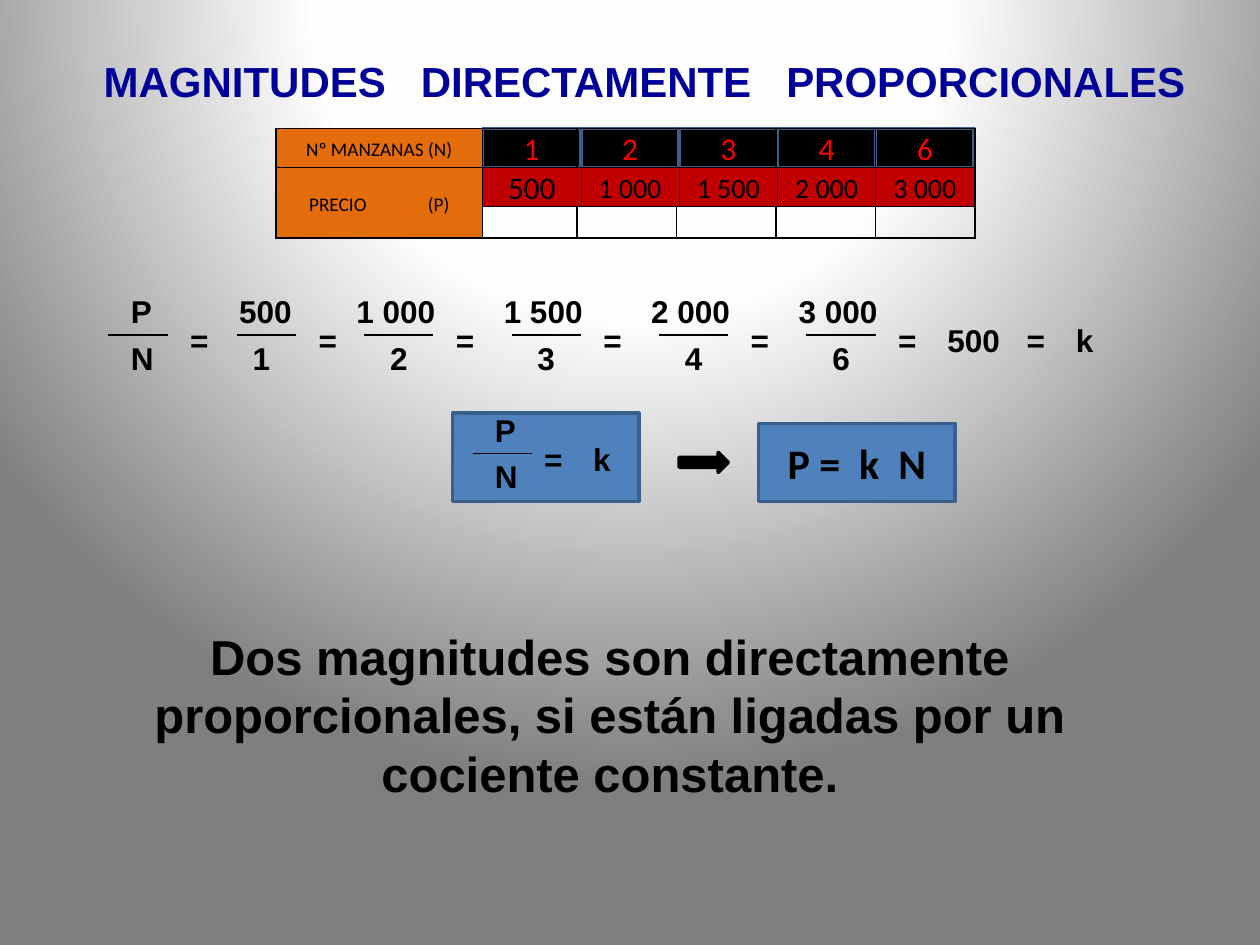
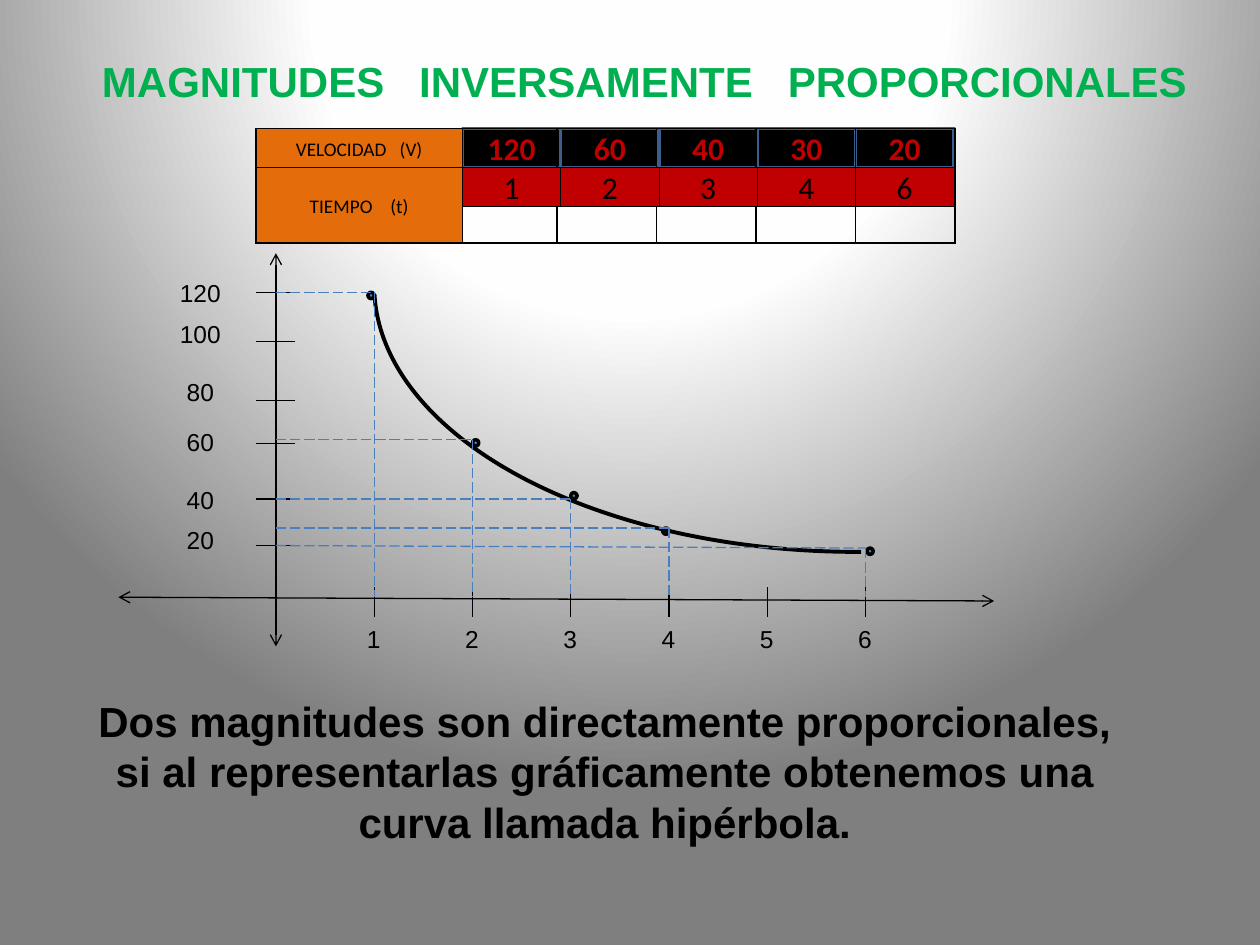
from lxml import etree
from pptx import Presentation
from pptx import util as u
from pptx.dml.color import RGBColor
from pptx.enum import dml, shapes, text
from pptx.oxml import ns

BLACK, RED, ORANGE = "000000", "C00000", "E46C0A"
BLUE, EDGE, DASH = "4F81BD", "3A5F8C", "4B7EBC"
BODY = {"size": 18, "name": "Arial", "bold": True, "color": BLACK}
AXIS = {**BODY, "size": 14, "bold": False}
LABEL = {"size": 11, "name": "Calibri", "bold": False, "color": BLACK}
VALUE = {**LABEL, "size": 18}
KINDS = shapes.MSO_SHAPE
CENTER = text.PP_ALIGN.CENTER
color = RGBColor.from_string


def write(frame, words, style, align=CENTER, gap=0):
    """Write one paragraph; each "|" becomes a space widened by gap points."""
    para = frame.paragraphs[0]
    para.alignment = align
    for index, part in enumerate(words.split("|")):
        for content, extra in ((" ", gap), (part, 0)):
            if extra == 0 and content == " " or index == 0 and content == " ":
                continue
            span = para.add_run()
            span.text = content
            for key, value in style.items():
                if key == "color":
                    span.font.color.rgb = color(value)
                else:
                    setattr(span.font, key, u.Pt(value) if key == "size" else value)
            if extra:
                span.font._element.set("spc", str(round(extra * 100)))
    return para


def box(page, area, words="", style=BODY, kind=None, fill=BLUE, edge=EDGE,
        weight=2, align=CENTER, gap=0):
    """Add a preset shape, or a plain text box when kind is None."""
    area = [u.Inches(length) for length in area]
    if kind is None:
        shape = page.shapes.add_textbox(*area)
    else:
        shape = page.shapes.add_shape(kind, *area)
        shape.shadow.inherit = False
        shape.line.color.rgb = color(edge)
        shape.line.width = u.Pt(weight)
        if fill:
            shape.fill.solid()
            shape.fill.fore_color.rgb = color(fill)
        else:
            shape.fill.background()
        shape.text_frame.vertical_anchor = text.MSO_ANCHOR.MIDDLE
    shape.text_frame.word_wrap = True
    if words:
        write(shape.text_frame, words, style, align, gap)
    return shape


deck = Presentation()
deck.slide_width, deck.slide_height = u.Inches(10), u.Inches(7.5)

# Shared radial background
backdrop = deck.slide_master.background.fill
backdrop.gradient()
gradient = deck.slide_master._element.find(".//" + ns.qn("p:bgPr") + "/" + ns.qn("a:gradFill"))
for child in list(gradient):
    gradient.remove(child)
stops = etree.SubElement(gradient, ns.qn("a:gsLst"))
for position, shade in ((0, "FFFFFF"), (40, "FEFEFE"), (100, "7F7F7F")):
    stop = etree.SubElement(stops, ns.qn("a:gs"), pos=str(position * 1000))
    etree.SubElement(stop, ns.qn("a:srgbClr"), val=shade)
circle = etree.SubElement(gradient, ns.qn("a:path"))
circle.set("path", "circle")
etree.SubElement(circle, ns.qn("a:fillToRect"), l="50000", t="-80000", r="50000", b="180000")

# Title, table and statement of each slide
topics = [
    {"title": "MAGNITUDES|DIRECTAMENTE|PROPORCIONALES", "color": "000099",
     "left": 2.19, "strip": 3.83, "height": 0.56,
     "labels": [("Nº MANZANAS (N)", 0), ("PRECIO|(P)", 32.4)],
     "top": ["1", "2", "3", "4", "6"], "top_style": {**VALUE, "color": "FF0000"},
     "bottom": ["500", "1 000", "1 500", "2 000", "3 000"],
     "statement": "Dos magnitudes son directamente proporcionales, si están "
                  "ligadas por un cociente constante.",
     "area": (0.62, 4.92, 8.44, 1.51), "size": 28},
    {"title": "MAGNITUDES|INVERSAMENTE|PROPORCIONALES", "color": "00B050",
     "left": 2.03, "strip": 3.67, "height": 0.6,
     "labels": [("VELOCIDAD|(V)", 5), ("TIEMPO|(t)", 7.5)],
     "top": ["120", "60", "40", "30", "20"],
     "top_style": {**VALUE, "color": RED, "bold": True},
     "bottom": ["1", "2", "3", "4", "6"],
     "statement": "Dos magnitudes son directamente proporcionales, si al "
                  "representarlas gráficamente obtenemos una curva llamada hipérbola.",
     "area": (0.62, 5.47, 8.36, 1.31), "size": 24},
]
pages = []
for topic in topics:
    page = deck.slides.add_slide(deck.slide_layouts[6])
    pages.append(page)
    title = box(page, (0.7, 0.39, 8.83, 0.5), topic["title"],
                {**BODY, "size": 24, "color": topic["color"]}, gap=13.3)
    title.text_frame.word_wrap = False
    for column, value in enumerate(topic["top"]):
        box(page, (topic["strip"] + 0.78 * column, 1.02, 0.78, 0.31), value,
            topic["top_style"], KINDS.RECTANGLE, BLACK)

    table = page.shapes.add_table(2, 6, u.Inches(topic["left"]), u.Inches(1.02),
                                  u.Inches(5.55), u.Inches(0.31 + topic["height"])).table
    table.first_row = table.horz_banding = False
    for column, width in zip(table.columns, [1.64, 0.75] + [0.79] * 4):
        column.width = u.Inches(width)
    for row, height, (label, gap) in zip(table.rows, (0.31, topic["height"]), topic["labels"]):
        row.height = u.Inches(height)
        for index, cell in enumerate(row.cells):
            cell.margin_top = cell.margin_bottom = 0
            cell.margin_left = cell.margin_right = u.Inches(0.07)
            cell.vertical_anchor = text.MSO_ANCHOR.MIDDLE
            properties = cell._tc.get_or_add_tcPr()
            for side in ("a:lnL", "a:lnR", "a:lnT", "a:lnB"):
                border = etree.SubElement(properties, ns.qn(side), w="12700")
                paint = etree.SubElement(border, ns.qn("a:solidFill"))
                etree.SubElement(paint, ns.qn("a:srgbClr"), val=BLACK)
            if index == 0:
                cell.fill.solid()
                cell.fill.fore_color.rgb = color(ORANGE)
                write(cell.text_frame, label, LABEL, gap=gap).line_spacing = 1.15
            else:
                cell.fill.background()
                etree.SubElement(cell.text_frame.paragraphs[0]._p,
                                 ns.qn("a:endParaRPr"), sz="1100")

    for column, value in enumerate(topic["bottom"]):
        box(page, (topic["strip"] + 0.78 * column, 1.33, 0.78, 0.31), value,
            {**VALUE, "size": 16 if len(value) > 3 else 18},
            KINDS.RECTANGLE, RED, BLACK, 0.25)
    box(page, topic["area"], topic["statement"], {**BODY, "size": topic["size"]})

direct, inverse = pages
lines = []  # page, start, end, colour, weight, dash, arrowheads

# Direct proportion: chain of equal quotients and its conclusion
box(direct, (3.59, 3.28, 1.48, 0.7), kind=KINDS.RECTANGLE)
box(direct, (5.39, 3.59, 0.39, 0.16), kind=KINDS.RIGHT_ARROW, fill=BLACK, edge=BLACK)
box(direct, (6.02, 3.36, 1.56, 0.62), "P =|k|N", {**VALUE, "size": 24, "bold": True},
    KINDS.RECTANGLE, gap=5.4)

letters = (0.47, 0.08, 0.47, 0.08, 0.47)  # bar width, then width and shift of each term
hundreds = (0.47, -0.08, 0.78, -0.08, 0.55)
thousands = (0.55, -0.16, 0.86, 0, 0.55)
quotients = [("P", "N", 0.86, 2.66, letters), ("500", "1", 1.88, 2.66, hundreds),
             ("P", "N", 3.75, 3.6, letters)]
for index, (price, apples) in enumerate(zip(topics[0]["bottom"][1:], topics[0]["top"][1:])):
    quotients.append((price, apples, 2.89 + 1.17 * index, 2.66, thousands))
terms = [("500", 7.42, 2.5, 0.7), ("=", 8.05, 2.5, 0.39),
         ("k", 8.44, 2.5, 0.47), ("k", 4.61, 3.44, 0.47)]
for above, below, left, bar, (width, shift, wide, low_shift, low_wide) in quotients:
    terms.append((above, left + shift, bar - 0.39, wide))
    box(direct, (left + low_shift, bar - 0.02, low_wide, 0.4), below,
        align=CENTER if below.isdigit() else text.PP_ALIGN.LEFT)
    lines.append((direct, (left, bar), (left + width, bar), BLACK, 1, False, False))
    equals = 4.22 if bar > 3 else left + width + 0.08
    terms.append(("=", equals, bar - 0.16, 0.39))
for words, left, top, width in terms:
    box(direct, (left, top, width, 0.4), words, align=text.PP_ALIGN.LEFT)

# Inverse proportion: axes, ticks, guides and hyperbola
ORIGIN, UNIT = 2.19, 0.78
for start, end in (((ORIGIN, 2.01), (ORIGIN, 5.13)), ((0.94, 4.74), (7.89, 4.77))):
    lines.append((inverse, start, end, BLACK, 0.75, False, True))
for number in range(1, 7):
    x = ORIGIN + UNIT * number
    lines.append((inverse, (x, 4.66), (x, 4.9), BLACK, 0.75, False, False))
    box(inverse, (x - 0.2, 4.9, 0.39, 0.34), str(number), AXIS)
for speed, tick, top in ((120, 2.32, 2.16), (100, 2.71, 2.48), (80, 3.18, 2.94),
                         (60, 3.52, 3.34), (40, 3.96, 3.8), (20, 4.33, 4.12)):
    lines.append((inverse, (2.03, tick), (2.34, tick), BLACK, 0.75, False, False))
    box(inverse, (1.28, top, 0.62, 0.34), str(speed), AXIS)
for time, height, dot_left, dot_top in ((1, 2.32, 2.92, 2.32), (2, 3.49, 3.75, 3.49),
                                        (3, 3.96, 4.53, 3.91), (4, 4.19, 5.26, 4.19),
                                        (6, 4.35, 6.88, 4.35)):
    x = ORIGIN + UNIT * time
    box(inverse, (dot_left, dot_top, 0.05, 0.05), kind=KINDS.OVAL, edge=BLACK)
    start = 4.33 if time == 6 else height
    for corner, end in (((x, height), (x, 4.74)), ((ORIGIN, start), (x, height))):
        lines.append((inverse, corner, end, DASH, 0.75, True, False))
hyperbola = box(inverse, (2.97, 0.16, 7.66, 4.22), kind=KINDS.ARC, fill=None,
                edge=BLACK, weight=2.25)
hyperbola.rotation = 180
hyperbola.adjustments[0], hyperbola.adjustments[1] = 161.43, 215.42

for page, start, end, shade, weight, dashed, arrows in lines:
    line = page.shapes.add_connector(shapes.MSO_CONNECTOR.STRAIGHT,
                                     *[u.Inches(length) for length in start + end])
    line.line.color.rgb = color(shade)
    line.line.width = u.Pt(weight)
    if dashed:
        line.line.dash_style = dml.MSO_LINE.LONG_DASH
    if arrows:
        for tip in ("a:headEnd", "a:tailEnd"):
            etree.SubElement(line.line._get_or_add_ln(), ns.qn(tip), type="arrow")
    etree.SubElement(line._element.spPr, ns.qn("a:effectLst"))

deck.save("out.pptx")
